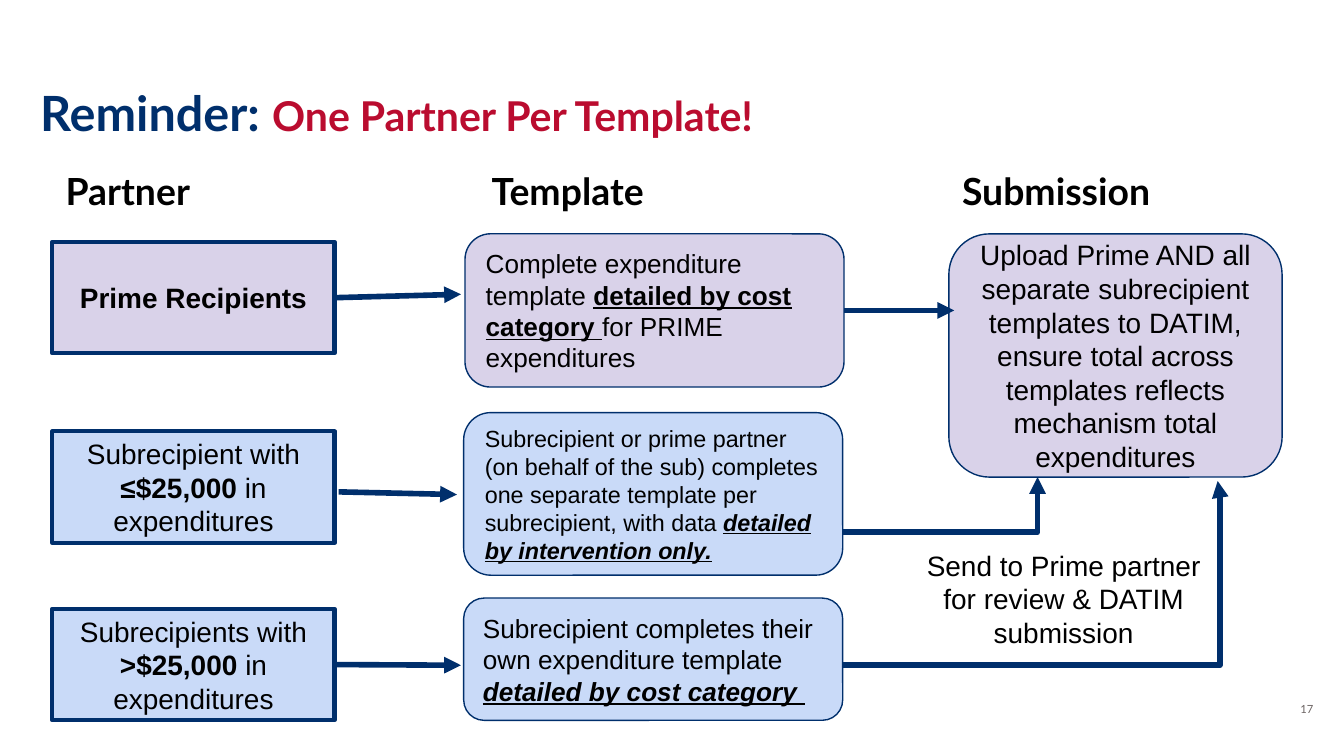
from lxml import etree
from pptx import Presentation
from pptx.dml.color import RGBColor
from pptx.enum.shapes import MSO_CONNECTOR as CONNECTOR, MSO_SHAPE as SHAPE
from pptx.enum.text import MSO_ANCHOR as ANCHOR, PP_ALIGN as ALIGN
from pptx.oxml.ns import qn
from pptx.util import Inches, Pt

NAVY, RED, GREY, BLACK = "002F6C", "BA0C2F", "6C6463", "000000"
LILAC, BLUE = "D9D2E9", "C9DAF8"
BOLD = {"bold": True}
BOLD_UNDERLINE = {"bold": True, "underline": True}
EMPHASIS = {"bold": True, "italic": True, "underline": True}


def color(value):
    return RGBColor.from_string(value)


def write(shape, runs, size, font="Arial", align=ALIGN.LEFT, anchor=ANCHOR.MIDDLE, inset=0.1):
    """Fill a shape with (text, format values) runs in one paragraph."""
    frame = shape.text_frame
    frame.word_wrap = True
    frame.vertical_anchor = anchor
    frame.margin_left = frame.margin_right = Inches(0.1)
    frame.margin_top = frame.margin_bottom = Inches(inset)
    paragraph = frame.paragraphs[0]
    paragraph.alignment = align
    for text, values in runs:
        run = paragraph.add_run()
        run.text = text
        values = {"size": Pt(size), "name": font, **values}
        run.font.color.rgb = color(values.pop("color", BLACK))
        for name, value in values.items():
            setattr(run.font, name, value)


presentation = Presentation()
presentation.slide_width = Inches(10)
presentation.slide_height = Inches(10 * 9 / 16)
slide = presentation.slides.add_slide(presentation.slide_layouts[6])

# Title, column headings and page number
title = slide.shapes.add_textbox(Inches(0.2), Inches(0.24), Inches(9.72), Inches(0.91))
write(title, [("Reminder: ", {"bold": True, "color": NAVY}),
              ("One Partner Per Template!", {"bold": True, "color": RED, "size": Pt(22)})],
      26, "Lato", anchor=ANCHOR.BOTTOM)

for text, left, width in [("Partner", 0.39, 1.7), ("Template", 3.56, 1.7), ("Submission", 7.06, 2.03)]:
    heading = slide.shapes.add_textbox(Inches(left), Inches(1.15), Inches(width), Inches(0.54))
    write(heading, [(text, BOLD)], 20, "Lato", anchor=ANCHOR.TOP)

page_number = slide.shapes.add_textbox(Inches(9.27), Inches(5.06), Inches(0.6), Inches(0.43))
write(page_number, [("17", {"color": GREY})], 6, "Lato", ALIGN.RIGHT, inset=0.05)

# Boxes: name, preset, (left, top, width, height), fill, line width, text size, alignment, runs
RECT, ROUND = SHAPE.RECTANGLE, SHAPE.ROUNDED_RECTANGLE
box_rows = [
    ("prime", RECT, (0.39, 1.8, 2.1, 0.83), LILAC, 2.25, 15, ALIGN.CENTER,
     [("Prime Recipients", BOLD)]),
    ("small sub", RECT, (0.39, 3.21, 2.1, 0.83), BLUE, 2.25, 15, ALIGN.CENTER,
     [("Subrecipient with ", {}), ("≤$25,000", BOLD), (" in expenditures", {})]),
    ("large sub", RECT, (0.39, 4.53, 2.1, 0.83), BLUE, 2.25, 15, ALIGN.CENTER,
     [("Subrecipients with ", {}), (">$25,000", BOLD), (" in expenditures", {})]),
    ("prime template", ROUND, (3.46, 1.74, 2.82, 1.14), LILAC, 0.75, 14, ALIGN.LEFT,
     [("Complete expenditure template ", {}), ("detailed by cost category ", BOLD_UNDERLINE),
      ("for PRIME expenditures", {})]),
    ("small sub template", ROUND, (3.45, 3.07, 2.82, 1.21), BLUE, 0.75, 12.5, ALIGN.LEFT,
     [("Subrecipient or prime partner (on behalf of the sub) completes one separate template "
       "per subrecipient, with data ", {}), ("detailed by intervention only.", EMPHASIS)]),
    ("large sub template", ROUND, (3.45, 4.45, 2.82, 0.91), BLUE, 0.75, 14, ALIGN.LEFT,
     [("Subrecipient completes their own expenditure template ", {}),
      ("detailed by cost category ", EMPHASIS)]),
    ("submission", ROUND, (7.06, 1.74, 2.48, 1.81), LILAC, 0.75, 15, ALIGN.CENTER,
     [("Upload Prime AND all separate subrecipient templates to DATIM, ensure total across "
       "templates reflects mechanism total expenditures", {})]),
    ("review note", ROUND, (6.75, 4.04, 2.33, 0.83), None, None, 15, ALIGN.CENTER,
     [("Send to Prime partner for review & DATIM submission", {})]),
]
boxes = {}
for name, preset, place, fill, line_width, size, align, runs in box_rows:
    box = slide.shapes.add_shape(preset, *map(Inches, place))
    box.shadow.inherit = False
    if fill:
        box.fill.solid()
        box.fill.fore_color.rgb = color(fill)
        box.line.color.rgb = color(NAVY)
        box.line.width = Pt(line_width)
    else:
        box.fill.background()
        box.line.fill.background()
    write(box, runs, size, align=align)
    boxes[name] = box

# Arrows: box joined at its right side, start, end, elbow position (None for a straight arrow)
arrows = [
    ("prime", (2.49, 2.22), (3.43, 2.19), None),
    (None, (2.52, 3.66), (3.4, 3.68), None),
    ("large sub", (2.49, 4.94), (3.43, 4.95), None),
    ("prime template", (6.28, 2.31), (7.1, 2.31), None),
    (None, (6.27, 3.96), (7.72, 3.55), 100000),
    (None, (6.27, 4.95), (9.06, 3.58), 100600),
]
for source, start, end, elbow in arrows:
    kind = CONNECTOR.ELBOW if elbow else CONNECTOR.STRAIGHT
    arrow = slide.shapes.add_connector(kind, *map(Inches, start + end))
    if source:
        arrow.begin_connect(boxes[source], 3)
    arrow.line.color.rgb = color(NAVY)
    arrow.line.width = Pt(3)
    properties = arrow._element.spPr
    etree.SubElement(properties.find(qn("a:ln")), qn("a:tailEnd"), type="triangle")
    etree.SubElement(properties, qn("a:effectLst"))
    if elbow:
        adjustments = properties.find(qn("a:prstGeom")).find(qn("a:avLst"))
        etree.SubElement(adjustments, qn("a:gd"), name="adj1", fmla=f"val {elbow}")

presentation.save("out.pptx")
